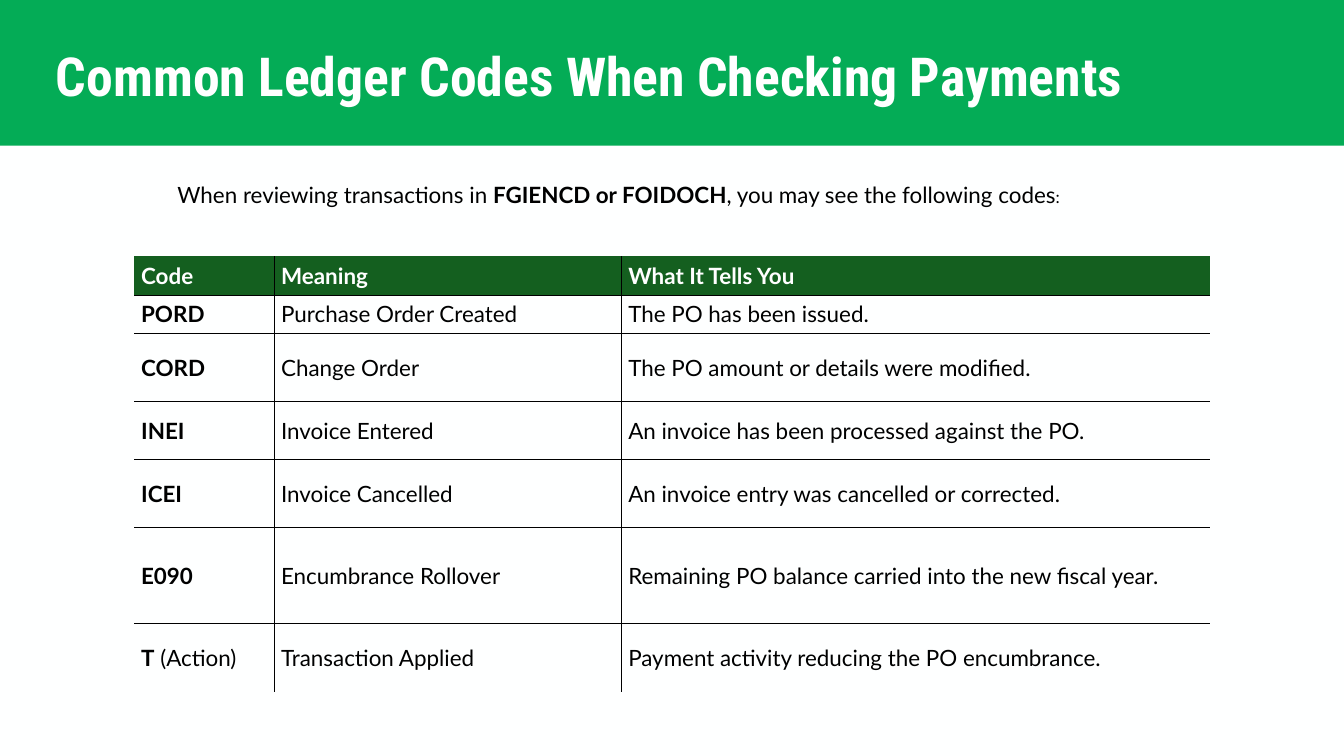
from lxml import etree
from pptx import Presentation
from pptx.dml.color import RGBColor
from pptx.enum import shapes, text
from pptx.oxml import ns
from pptx.util import Pt

COLORS = {
    "background": "FEFFFF",
    "banner": "04AC56",
    "header": "145F1F",
    "light": "FFFFFF",
    "dark": "000000",
}
BODY_FONT = "Lato"
TITLE_FONT = "Roboto Condensed"

INTRO = [
    ("When reviewing transactions in ", False, 24),
    ("FGIENCD or FOIDOCH", True, 24),
    (", you may see the following codes", False, 24),
    (":", False, 18),
]
HEADINGS = ["Code", "Meaning", "What It Tells You"]
CODES = [
    ("PORD", "Purchase Order Created", "The PO has been issued."),
    ("CORD", "Change Order", "The PO amount or details were modified."),
    ("INEI", "Invoice Entered", "An invoice has been processed against the PO."),
    ("ICEI", "Invoice Cancelled", "An invoice entry was cancelled or corrected."),
    ("E090", "Encumbrance Rollover", "Remaining PO balance carried into the new fiscal year."),
    ("T (Action)", "Transaction Applied", "Payment activity reducing the PO encumbrance."),
]
COLUMN_WIDTHS = [150, 372, 630]
ROW_HEIGHTS = [41.5, 41.5, 72.5, 62.5, 72.5, 103.5, 72.5]


def color(name):
    return RGBColor.from_string(COLORS[name])


def format_run(run, size, color_name, bold, font=BODY_FONT):
    run.font.size = Pt(size)
    run.font.name = font
    run.font.bold = bold
    run.font.color.rgb = color(color_name)


def add_runs(paragraph, parts, color_name):
    for words, bold, size in parts:
        run = paragraph.add_run()
        run.text = words
        format_run(run, size, color_name, bold)


def add_title_banner(slide, left, top, width, height):
    banner = slide.shapes.add_shape(
        shapes.MSO_SHAPE.RECTANGLE, Pt(left), Pt(top), Pt(width), Pt(height))
    banner.shadow.inherit = False
    banner.fill.solid()
    banner.fill.fore_color.rgb = color("banner")
    banner.line.fill.background()

    title = slide.shapes.add_textbox(Pt(left + 60), Pt(top + 61), Pt(1155), Pt(55.5))
    frame = title.text_frame
    frame.word_wrap = True
    frame.margin_left = frame.margin_top = frame.margin_right = frame.margin_bottom = 0
    frame.text = "Common Ledger Codes When Checking Payments"
    paragraph = frame.paragraphs[0]
    paragraph.line_spacing = Pt(54.2)
    format_run(paragraph.runs[0], 57.6, "light", True, TITLE_FONT)


def add_intro(slide, left, top, width, height):
    intro = slide.shapes.add_textbox(Pt(left), Pt(top), Pt(width), Pt(height))
    intro.text_frame.word_wrap = True
    add_runs(intro.text_frame.paragraphs[0], INTRO, "dark")


def set_borders(cell, visible):
    properties = cell._tc.get_or_add_tcPr()
    for position, side in enumerate("LRTB"):
        line = etree.Element(ns.qn(f"a:ln{side}"), w=str(Pt(1)))
        if side in visible:
            fill = etree.SubElement(line, ns.qn("a:solidFill"))
            etree.SubElement(fill, ns.qn("a:srgbClr"), val=COLORS["dark"])
        else:
            etree.SubElement(line, ns.qn("a:noFill"))
        properties.insert(position, line)


def inner_sides(row, column):
    return {
        side for side, inside in {
            "L": column > 0,
            "R": column < len(COLUMN_WIDTHS) - 1,
            "T": row > 0,
            "B": row < len(ROW_HEIGHTS) - 1,
        }.items() if inside
    }


def add_code_table(slide, left, top):
    table = slide.shapes.add_table(
        len(ROW_HEIGHTS), len(COLUMN_WIDTHS), Pt(left), Pt(top),
        Pt(sum(COLUMN_WIDTHS)), Pt(sum(ROW_HEIGHTS))).table
    table.horz_banding = False
    for column, width in zip(table.columns, COLUMN_WIDTHS):
        column.width = Pt(width)
    for row, height in zip(table.rows, ROW_HEIGHTS):
        row.height = Pt(height)

    for row, entries in enumerate([HEADINGS, *CODES]):
        is_header = row == 0
        for column, words in enumerate(entries):
            cell = table.cell(row, column)
            cell.vertical_anchor = text.MSO_ANCHOR.MIDDLE
            if is_header:
                cell.fill.solid()
                cell.fill.fore_color.rgb = color("header")
            else:
                cell.fill.background()
            code, space, note = words.partition(" (")
            parts = [(code, is_header or column == 0, 24)]
            if note:
                parts.append((space + note, False, 24))
            add_runs(cell.text_frame.paragraphs[0], parts, "light" if is_header else "dark")
            set_borders(cell, inner_sides(row, column))


def main():
    presentation = Presentation()
    presentation.slide_width = Pt(1440)
    presentation.slide_height = Pt(810)
    slide = presentation.slides.add_slide(presentation.slide_layouts[6])
    slide.background.fill.solid()
    slide.background.fill.fore_color.rgb = color("background")
    add_title_banner(slide, 0, 0, 1440, 156)
    add_code_table(slide, 144, 274.5)
    add_intro(slide, 183, 190, 1074, 36)
    presentation.save("out.pptx")


if __name__ == "__main__":
    main()
